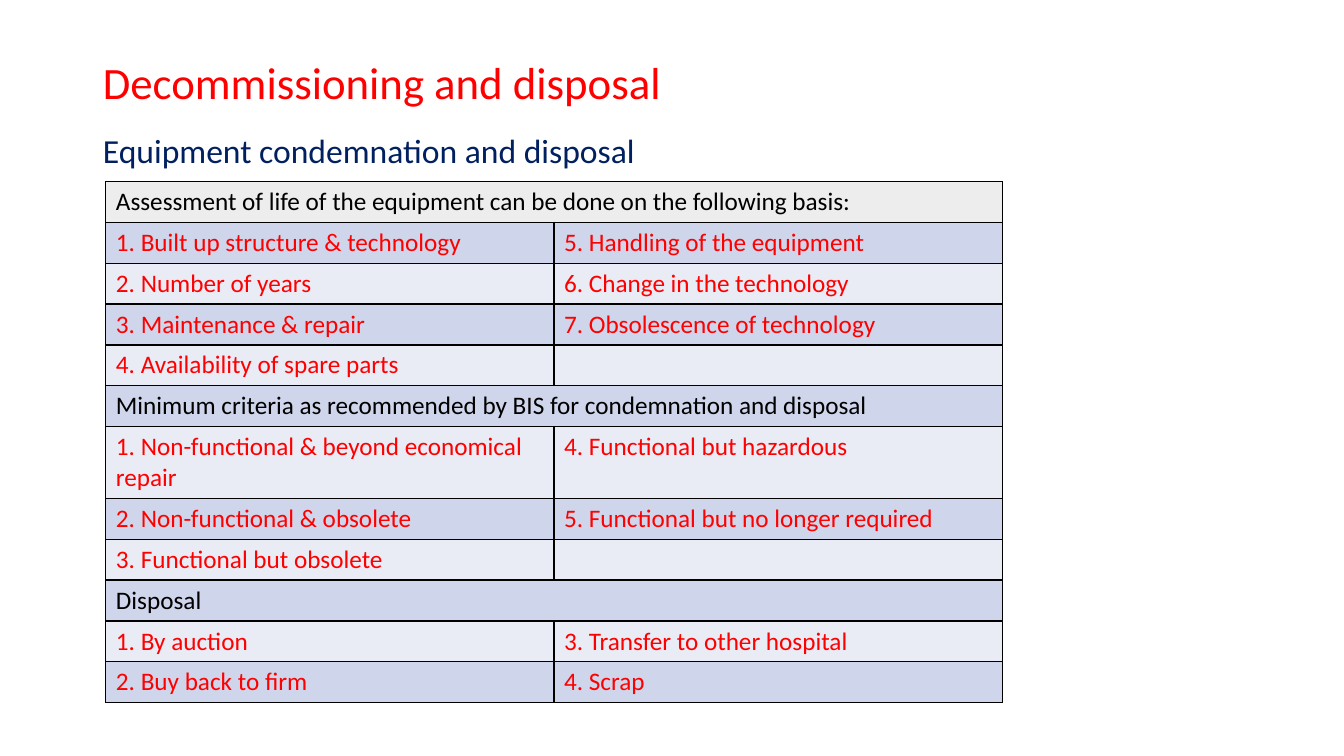
from dataclasses import dataclass

import lxml.etree
import pptx
import pptx.dml.color
import pptx.enum.text
import pptx.oxml.ns
import pptx.util

Inches = pptx.util.Inches
Align = pptx.enum.text.PP_ALIGN
Anchor = pptx.enum.text.MSO_ANCHOR
qn = pptx.oxml.ns.qn

COLORS = {
    "red": "FF0000",
    "navy": "002060",
    "black": "000000",
    "top_band": "EDEDED",
    "dark_band": "CFD5EA",
    "light_band": "E9EBF5",
}


@dataclass
class Section:
    heading: str
    left: list[str]
    right: list[str]
    heading_align: Align = Align.LEFT
    item_align: Align = Align.LEFT


SECTIONS = [
    Section(
        "Assessment of life of the equipment can be done on the following basis:",
        ["1. Built up structure & technology", "2. Number of years",
         "3. Maintenance & repair", "4. Availability of spare parts"],
        ["5. Handling of the equipment", "6. Change in the technology",
         "7. Obsolescence of technology", ""],
        item_align=Align.JUSTIFY,
    ),
    Section(
        "Minimum criteria as recommended by BIS for condemnation and disposal",
        ["1. Non-functional & beyond economical repair",
         "2. Non-functional & obsolete", "3. Functional but obsolete"],
        ["4. Functional but hazardous", "5. Functional but no longer required", ""],
        heading_align=Align.JUSTIFY,
    ),
    Section(
        "Disposal",
        ["1. By auction", "2. Buy back to firm"],
        ["3. Transfer to other hospital", "4. Scrap"],
    ),
]


def rgb(color: str) -> pptx.dml.color.RGBColor:
    return pptx.dml.color.RGBColor.from_string(COLORS[color])


def style_paragraph(paragraph, size: int, color: str, align: Align) -> None:
    paragraph.alignment = align
    paragraph.font.name = "Calibri"
    paragraph.font.size = pptx.util.Pt(size)
    paragraph.font.color.rgb = rgb(color)


def fill_placeholder(placeholder, text: str, top: float, height: float,
                     size: int, color: str, anchor: Anchor):
    placeholder.left, placeholder.top = Inches(0.92), Inches(top)
    placeholder.width, placeholder.height = Inches(11.5), Inches(height)
    frame = placeholder.text_frame
    frame.text = text
    frame.auto_size = pptx.enum.text.MSO_AUTO_SIZE.NONE
    frame.vertical_anchor = anchor
    paragraph = frame.paragraphs[0]
    paragraph.line_spacing = 0.9
    style_paragraph(paragraph, size, color, Align.LEFT)
    return paragraph


def remove_bullet(paragraph) -> None:
    properties = paragraph._p.get_or_add_pPr()
    properties.set("marL", "0")
    properties.set("indent", "0")
    properties.find(qn("a:defRPr")).addprevious(
        properties.makeelement(qn("a:buNone"), {}))


def add_borders(cell) -> None:
    properties = cell._tc.get_or_add_tcPr()
    for side in ("a:lnL", "a:lnR", "a:lnT", "a:lnB"):
        line = lxml.etree.SubElement(properties, qn(side), w=str(pptx.util.Pt(1)))
        fill = lxml.etree.SubElement(line, qn("a:solidFill"))
        lxml.etree.SubElement(fill, qn("a:srgbClr"), val=COLORS["black"])


def write_cell(cell, text: str, color: str, band: str, align: Align) -> None:
    add_borders(cell)
    cell.fill.solid()
    cell.fill.fore_color.rgb = rgb(band)
    cell.text = text
    style_paragraph(cell.text_frame.paragraphs[0], 18, color, align)


def add_criteria_table(slide) -> None:
    row_count = sum(1 + len(section.left) for section in SECTIONS)
    criteria = slide.shapes.add_table(
        row_count, 2, Inches(1.05), Inches(1.8), Inches(8.89), Inches(4.87)).table
    row = 0
    for section in SECTIONS:
        lines = [(section.heading, ""), *zip(section.left, section.right)]
        for position, texts in enumerate(lines):
            is_heading = position == 0
            if row == 0:
                band = "top_band"
            else:
                band = "dark_band" if row % 2 else "light_band"
            color = "black" if is_heading else "red"
            align = section.heading_align if is_heading else section.item_align
            for column, text in enumerate(texts):
                write_cell(criteria.cell(row, column), text, color, band, align)
            if is_heading:
                criteria.cell(row, 0).merge(criteria.cell(row, 1))
            row += 1


def main() -> None:
    deck = pptx.Presentation()
    deck.slide_width, deck.slide_height = Inches(13.33), Inches(7.5)
    slide = deck.slides.add_slide(deck.slide_layouts[1])
    fill_placeholder(slide.shapes.title, "Decommissioning and disposal",
                     0.4, 0.88, 32, "red", Anchor.MIDDLE)
    subtitle = fill_placeholder(
        slide.placeholders[1], "Equipment condemnation and disposal",
        1.28, 5.49, 24, "navy", Anchor.TOP)
    subtitle.space_before = pptx.util.Pt(10)
    remove_bullet(subtitle)
    add_criteria_table(slide)
    deck.save("out.pptx")


if __name__ == "__main__":
    main()
